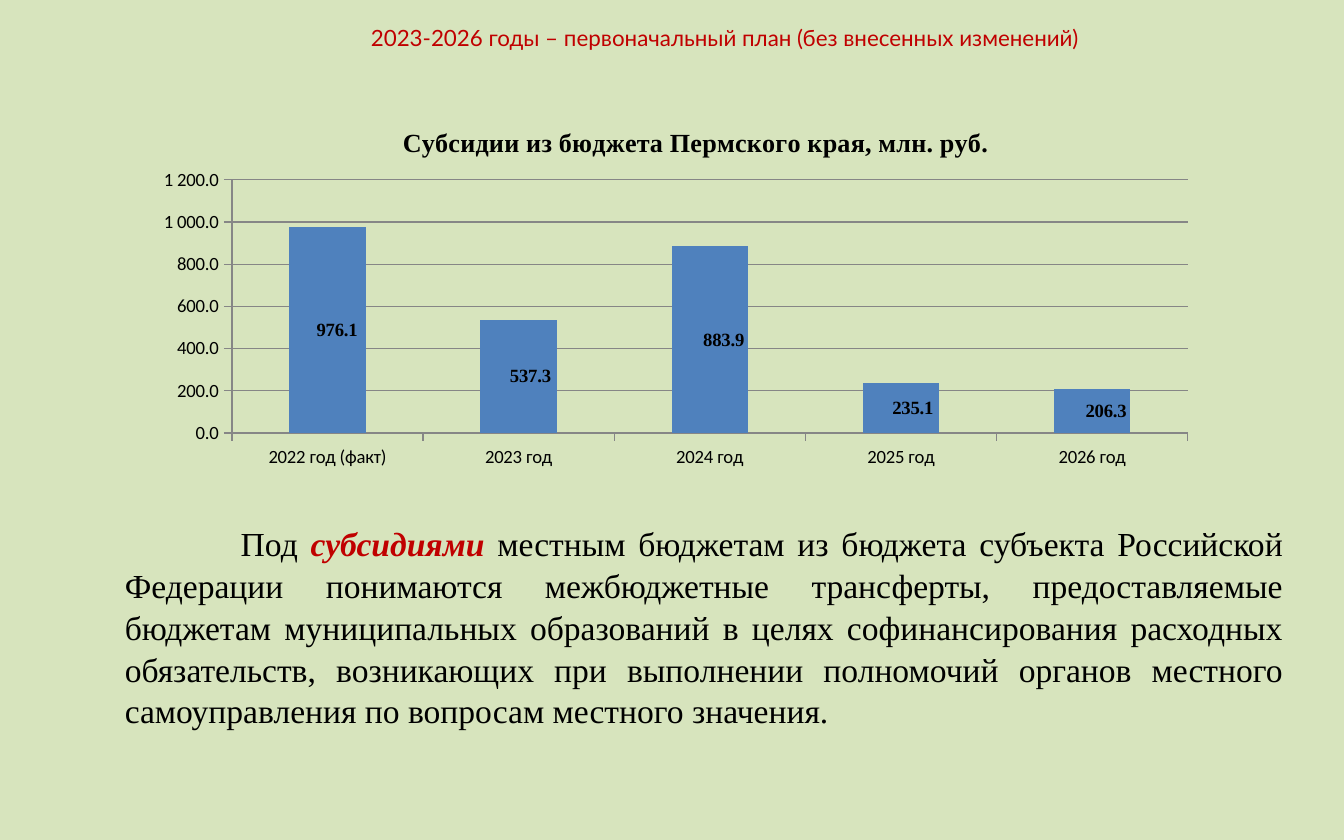
from typing import NamedTuple

from lxml.etree import SubElement
from pptx import Presentation
from pptx.chart.data import CategoryChartData
from pptx.dml.color import RGBColor
from pptx.enum.chart import XL_CHART_TYPE as ChartType, XL_TICK_MARK as TickMark
from pptx.enum.text import MSO_AUTO_SIZE as AutoSize, PP_ALIGN as Align
from pptx.oxml import parse_xml
from pptx.oxml.ns import nsdecls, qn
from pptx.util import Cm, Length, Pt

BACKGROUND = RGBColor(0xD7, 0xE4, 0xBD)
RED = RGBColor(0xC0, 0x00, 0x00)
BLACK = RGBColor(0x00, 0x00, 0x00)
BLUE = RGBColor(0x4F, 0x81, 0xBD)
GREY = RGBColor(0x86, 0x86, 0x86)
SERIF = "Times New Roman"
NUMBER_FORMAT = "#\\ ##0.0"


class Box(NamedTuple):
    left: Length
    top: Length
    width: Length
    height: Length


class Run(NamedTuple):
    text: str
    color: RGBColor = BLACK
    emphasis: bool = False


class Subsidy(NamedTuple):
    year: str
    millions: float
    label_shift: float


SUBSIDIES = [
    Subsidy("2022 год (факт)", 976.1, 0.007),
    Subsidy("2023 год", 537.3, 0.009),
    Subsidy("2024 год", 883.9, 0.011),
    Subsidy("2025 год", 235.1, 0.009),
    Subsidy("2026 год", 206.3, 0.011),
]
DEFINITION = [
    Run("Под "),
    Run("субсидиями", RED, True),
    Run(" местным бюджетам из бюджета субъекта Российской Федерации понимаются "
        "межбюджетные трансферты, предоставляемые бюджетам муниципальных образований "
        "в целях софинансирования расходных обязательств, возникающих при выполнении "
        "полномочий органов местного самоуправления по вопросам местного значения."),
]


def set_font(font, *, name: str, size: float, color: RGBColor = BLACK,
             bold: bool = False, italic: bool = False) -> None:
    font.name, font.size = name, Pt(size)
    font.bold, font.italic = bold, italic
    font.color.rgb = color


def add_text(slide, box: Box, runs: list[Run], *, font: str, size: float, align: Align,
             indent: Length = Cm(0), line_spacing: float = 1.0) -> None:
    frame = slide.shapes.add_textbox(*box).text_frame
    frame.word_wrap = True
    frame.auto_size = AutoSize.SHAPE_TO_FIT_TEXT
    paragraph = frame.paragraphs[0]
    paragraph.alignment = align
    paragraph.line_spacing = line_spacing
    paragraph._p.get_or_add_pPr().set("indent", str(int(indent)))
    for part in runs:
        run = paragraph.add_run()
        run.text = part.text
        set_font(run.font, name=font, size=size, color=part.color,
                 bold=part.emphasis, italic=part.emphasis)


def manual_layout(**settings: object):
    """Build a c:layout element; settings must come in schema order."""
    layout = parse_xml(f"<c:layout {nsdecls('c')}><c:manualLayout/></c:layout>")
    for tag, value in settings.items():
        SubElement(layout[0], qn(f"c:{tag}")).set("val", str(value))
    return layout


def place(element, layout, after: str) -> None:
    """Give a chart element its layout, replacing any automatic one."""
    for automatic in element.findall(qn("c:layout")):
        element.remove(automatic)
    if after:
        element.find(qn(after)).addnext(layout)
    else:
        element.insert(0, layout)


def add_subsidy_chart(slide, box: Box) -> None:
    data = CategoryChartData(number_format=NUMBER_FORMAT)
    data.categories = [subsidy.year for subsidy in SUBSIDIES]
    data.add_series("Субсидии", [subsidy.millions for subsidy in SUBSIDIES])
    chart = slide.shapes.add_chart(ChartType.COLUMN_STACKED, *box, data).chart
    set_font(chart.font, name="Calibri", size=10)
    chart.has_legend = False

    heading = chart.chart_title.text_frame.paragraphs[0].add_run()
    heading.text = "Субсидии из бюджета Пермского края, млн. руб."
    set_font(heading.font, name=SERIF, size=14, bold=True)
    chart.chart_title.include_in_layout = False
    place(chart.chart_title._element,
          manual_layout(xMode="edge", yMode="edge", x=0.24, y=0.05), "c:tx")

    for axis in (chart.category_axis, chart.value_axis):
        axis.major_tick_mark = TickMark.OUTSIDE
        axis.minor_tick_mark = TickMark.NONE
        axis.format.line.color.rgb = GREY
        axis.format.line.width = Pt(0.75)
    amounts = chart.value_axis
    amounts.minimum_scale, amounts.maximum_scale, amounts.major_unit = 0, 1200, 200
    amounts.tick_labels.number_format = NUMBER_FORMAT
    amounts.tick_labels.number_format_is_linked = False
    amounts.major_gridlines.format.line.color.rgb = GREY
    amounts.major_gridlines.format.line.width = Pt(0.75)

    plot = chart.plots[0]
    plot.gap_width, plot.overlap, plot.vary_by_categories = 150, 100, False
    columns = plot.series[0]
    columns.format.fill.solid()
    columns.format.fill.fore_color.rgb = BLUE
    labels = columns.data_labels
    labels.show_value = True
    labels.number_format = NUMBER_FORMAT
    labels.number_format_is_linked = False
    set_font(labels.font, name=SERIF, size=10, bold=True)
    for index in range(len(SUBSIDIES)):
        set_font(columns.points[index].data_label.font, name=SERIF, size=10, bold=True)
    for subsidy, label in zip(SUBSIDIES, columns._element.iter(qn("c:dLbl"))):
        place(label, manual_layout(x=subsidy.label_shift, y=0), "c:idx")

    plot_area = chart._chartSpace.chart.plotArea
    place(plot_area, manual_layout(layoutTarget="inner", xMode="edge", yMode="edge",
                                   x=0.084, y=0.209, w=0.897, h=0.68), "")


def main() -> None:
    deck = Presentation()
    deck.slide_width, deck.slide_height = Cm(25.4), Cm(15.88)
    slide = deck.slides.add_slide(deck.slide_layouts[6])
    slide.background.fill.solid()
    slide.background.fill.fore_color.rgb = BACKGROUND

    add_text(slide, Box(Cm(4.09), Cm(0.33), Cm(19.23), Cm(0.77)),
             [Run("2023-2026 годы – первоначальный план (без внесенных изменений)", RED)],
             font="Lato", size=12, align=Align.CENTER)
    add_subsidy_chart(slide, Box(Cm(2.69), Cm(1.93), Cm(20.14), Cm(7.04)))
    add_text(slide, Box(Cm(2.11), Cm(9.73), Cm(22.4), Cm(4.11)), DEFINITION,
             font=SERIF, size=18, align=Align.JUSTIFY, indent=Cm(2.19), line_spacing=1.04)
    deck.save("out.pptx")


if __name__ == "__main__":
    main()
